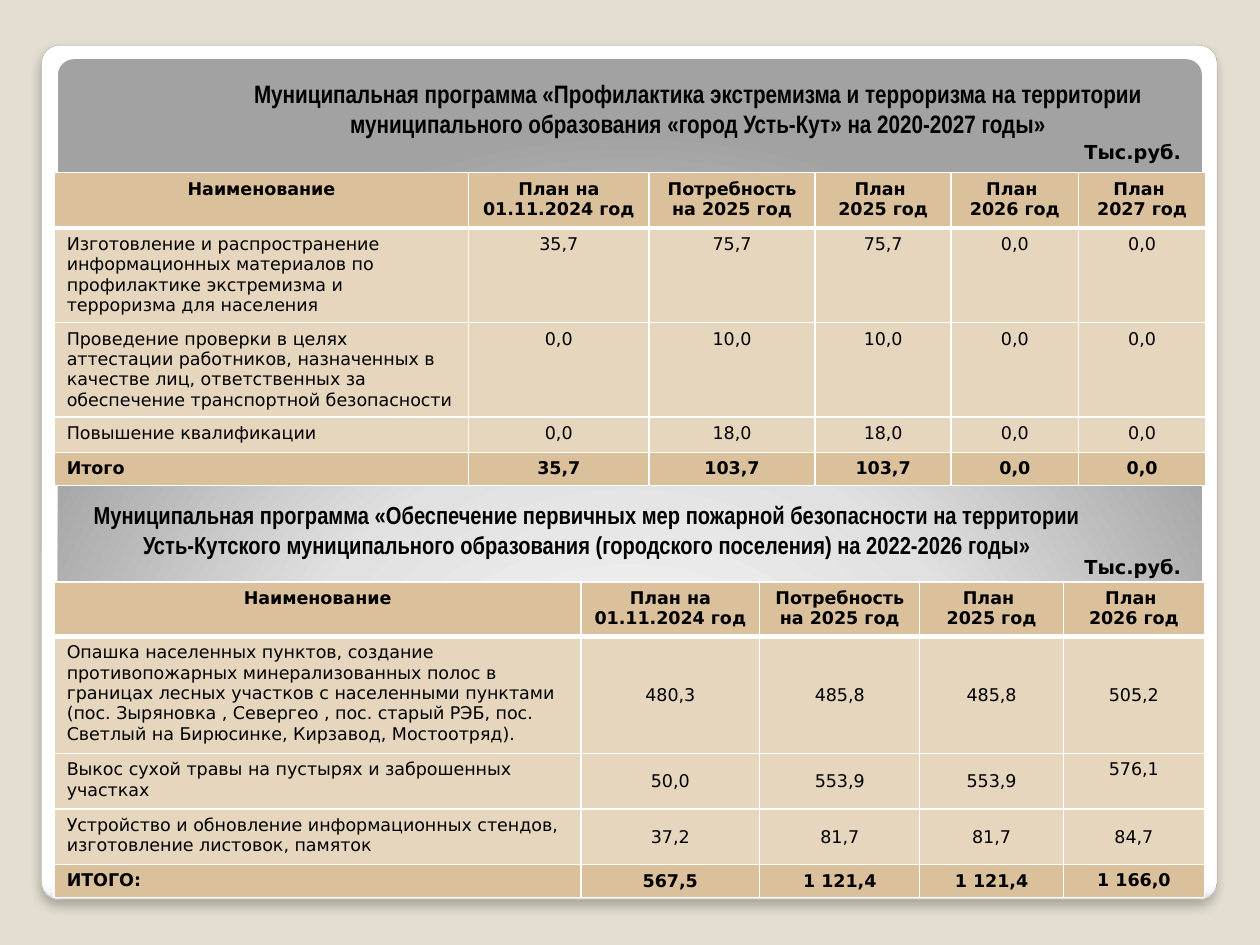
from lxml import etree
from pptx import Presentation
from pptx.dml.color import RGBColor
from pptx.enum.shapes import MSO_SHAPE
from pptx.enum.text import MSO_ANCHOR, MSO_AUTO_SIZE, PP_ALIGN
from pptx.oxml import parse_xml
from pptx.oxml.ns import nsdecls, qn
from pptx.util import Inches, Pt

ROUND = MSO_SHAPE.ROUNDED_RECTANGLE
TOP, MID = MSO_ANCHOR.TOP, MSO_ANCHOR.MIDDLE
LEFT, CENTER = PP_ALIGN.LEFT, PP_ALIGN.CENTER
FIXED = MSO_AUTO_SIZE.NONE

COLORS = {"back": "E3DED1", "edge": "A4A4A4", "text": "000000",
          "strong": "DAC19B", "light": "E6D6BD", "rule": "FFFFFF"}
NARROW, SANS = "Arial Narrow", "DejaVu Sans"
UNIT = "Тыс.руб."
NAME, NOW, NEED = "Наименование", "План на 01.11.2024 год", "Потребность на 2025 год"

SAFETY = [
    [NAME, NOW, NEED, "План \n2025 год", "План \n2026 год", "План \n2027 год"],
    ["Изготовление и распространение информационных материалов по профилактике "
     "экстремизма и терроризма для населения", "35,7", "75,7", "75,7", "0,0", "0,0"],
    ["Проведение проверки в целях аттестации работников, назначенных в качестве лиц, "
     "ответственных за обеспечение транспортной безопасности",
     "0,0", "10,0", "10,0", "0,0", "0,0"],
    ["Повышение квалификации", "0,0", "18,0", "18,0", "0,0", "0,0"],
    ["Итого", "35,7", "103,7", "103,7", "0,0", "0,0"],
]
FIRE = [
    [NAME, NOW, NEED, "План \n2025 год", "План \n2026 год"],
    ["Опашка населенных пунктов, создание противопожарных минерализованных полос в "
     "границах лесных участков с населенными пунктами (пос. Зыряновка , Севергео , "
     "пос. старый РЭБ, пос. Светлый на Бирюсинке, Кирзавод, Мостоотряд).",
     "480,3", "485,8", "485,8", "505,2"],
    ["Выкос сухой травы на пустырях и заброшенных участках",
     "50,0", "553,9", "553,9", "576,1"],
    ["Устройство и обновление информационных стендов, изготовление листовок, памяток",
     "37,2", "81,7", "81,7", "84,7"],
    ["ИТОГО:", "567,5", "1 121,4", "1 121,4", "1 166,0"],
]


def rgb(name):
    return RGBColor.from_string(COLORS[name])


def box(*sizes):
    return [Inches(n) for n in sizes]


def style(para, align, size, font=SANS, bold=True):
    para.alignment = align
    look = {"size": Pt(size), "name": font, "bold": bold}
    for key, value in look.items():
        setattr(para.font, key, value)
    para.font.color.rgb = rgb("text")


def fill_frame(frame, text, anchor, size, font=SANS):
    look = {"text": text, "word_wrap": True, "auto_size": FIXED,
            "vertical_anchor": anchor, "margin_left": Inches(0.1),
            "margin_right": Inches(0.1), "margin_top": Inches(0.05),
            "margin_bottom": Inches(0.05)}
    for key, value in look.items():
        setattr(frame, key, value)
    for para in frame.paragraphs:
        style(para, CENTER, size, font)


def add_text(slide, place, *content):
    frame = slide.shapes.add_textbox(*box(*place)).text_frame
    fill_frame(frame, *content)
    return frame


def add_panel(slide, depth, place, stops, course):
    """Rounded panel with a gradient, put at the given depth from the back."""
    panel = slide.shapes.add_shape(ROUND, *box(*place))
    panel.adjustments[0] = 0.021
    marks = "".join(f'<a:gs pos="{pos * 1000}"><a:srgbClr val="{tone}"/></a:gs>'
                    for pos, tone in stops)
    panel._element.spPr.append(parse_xml(
        f'<a:gradFill {nsdecls("a")} rotWithShape="1"><a:gsLst>{marks}</a:gsLst>'
        f'{course}</a:gradFill>'))
    panel.line.fill.background()
    panel.shadow.inherit = False
    slide.shapes._spTree.insert(2 + depth, panel._element)
    return panel


def add_shadow(shape):
    effects = shape._element.spPr.find(qn("a:effectLst"))
    effects.append(parse_xml(
        f'<a:outerShdw {nsdecls("a")} blurRad="{Pt(6)}" dist="{Pt(4)}" dir="5400000" '
        'algn="tl" rotWithShape="0"><a:srgbClr val="000000"><a:alpha val="25000"/>'
        '</a:srgbClr></a:outerShdw>'))


def add_rules(cell, top, bottom):
    props = cell._tc.get_or_add_tcPr()
    for side, width in {"L": 1, "R": 1, "T": top, "B": bottom}.items():
        line = etree.SubElement(props, qn(f"a:ln{side}"), w=str(Pt(width)))
        paint = etree.SubElement(line, qn("a:solidFill"))
        etree.SubElement(paint, qn("a:srgbClr"), val=COLORS["rule"])


def add_table(slide, top, data, widths, heights, middle):
    """Table whose first and last rows are strong; middle(row, col) centres a cell."""
    place = box(0.43, top, sum(widths), sum(heights))
    table = slide.shapes.add_table(len(data), len(widths), *place).table
    for col, width in zip(table.columns, widths):
        col.width = Inches(width)
    for row, height in zip(table.rows, heights):
        row.height = Inches(height)
    for r, line in enumerate(data):
        strong = r in (0, len(data) - 1)
        for c, text in enumerate(line):
            cell = table.cell(r, c)
            cell.text = text
            add_rules(cell, 3 if r == 1 else 1, 3 if r == 0 else 1)
            cell.fill.solid()
            cell.fill.fore_color.rgb = rgb("strong" if strong else "light")
            if middle(r, c):
                cell.vertical_anchor = MID
                cell.margin_left = cell.margin_right = cell.margin_top = Inches(0.01)
                cell.margin_bottom = 0
            for para in cell.text_frame.paragraphs:
                style(para, LEFT if r and not c else CENTER, 10, bold=strong)


def add_title(slide, text):
    title = slide.shapes.title
    title.left, title.top, title.width, title.height = box(1.52, 0.57, 8.04, 0.79)
    fill_frame(title.text_frame, text, TOP, 14.4, NARROW)


def main():
    deck = Presentation()
    deck.slide_width, deck.slide_height = box(10, 7.5)
    slide = deck.slides.add_slide(deck.slide_layouts[5])
    slide.background.fill.solid()
    slide.background.fill.fore_color.rgb = rgb("back")

    card = add_panel(slide, 0, (0.33, 0.36, 9.33, 6.78),
                     [(0, "FFFFFF"), (98, "FFFFFF"), (99, "F7F7F7"), (100, "DADADA")],
                     '<a:lin ang="5400000" scaled="0"/>')
    card.line.color.rgb = rgb("edge")
    card.line.width = Pt(0.16)
    add_shadow(card)
    add_panel(slide, 1, (0.46, 0.47, 9.08, 6),
              [(0, "FFFFFF"), (55, "E1E1E1"), (100, "A2A2A2")],
              '<a:path path="circle"><a:fillToRect l="50000" t="175000" '
              'r="50000" b="-75000"/></a:path>')

    add_title(slide, "Муниципальная программа «Профилактика экстремизма и терроризма на "
                     "территории муниципального образования «город Усть-Кут» на "
                     "2020-2027 годы»")
    add_table(slide, 1.37, SAFETY, [3.29, 1.43, 1.32, 1.08, 1.01, 1.01],
              [0.44, 0.75, 0.75, 0.28, 0.26], lambda r, c: False)

    head = add_text(slide, (0.51, 3.92, 8.98, 0.57),
                    "Муниципальная программа «Обеспечение первичных мер пожарной "
                    "безопасности на территории\nУсть-Кутского муниципального "
                    "образования (городского поселения) на 2022-2026 годы»",
                    TOP, 14, NARROW)
    head.paragraphs[0]._p.get_or_add_pPr().set("marR", str(Inches(0.68)))
    add_table(slide, 4.62, FIRE, [4.18, 1.42, 1.27, 1.14, 1.12],
              [0.43, 0.93, 0.44, 0.44, 0.26],
              lambda r, c: r and c and (c < 4 or r in (1, 3)))
    for top in (1.08, 4.37):
        add_text(slide, (8.49, top, 1, 0.25), UNIT, MID, 11)
    deck.save("out.pptx")


if __name__ == "__main__":
    main()
